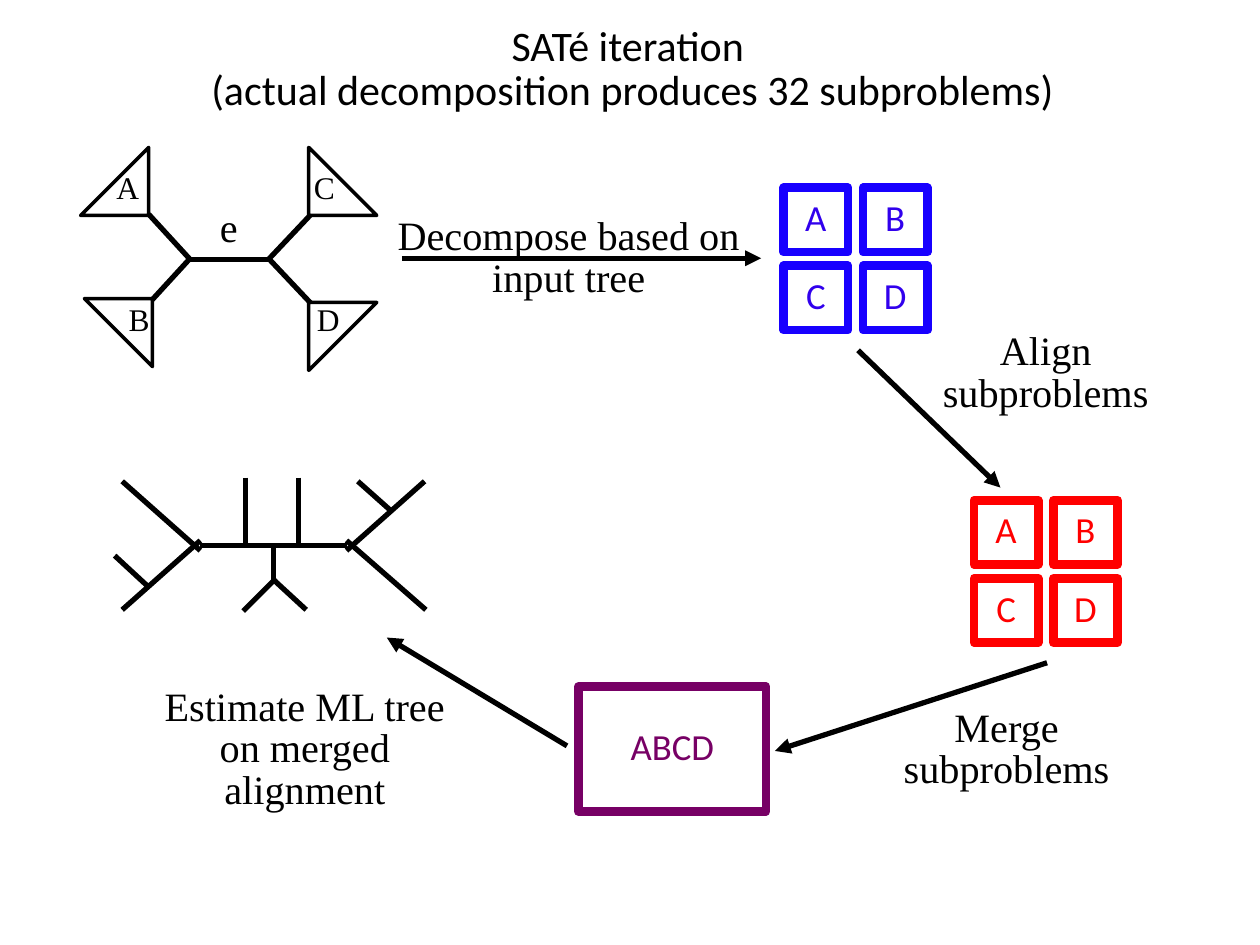
from lxml import etree
from pptx import Presentation
from pptx.dml.color import RGBColor
from pptx.enum.shapes import MSO_CONNECTOR, MSO_SHAPE
from pptx.enum.text import MSO_ANCHOR, PP_ALIGN
from pptx.oxml.ns import qn
from pptx.util import Inches, Pt

RECTANGLE, TRIANGLE = MSO_SHAPE.RECTANGLE, MSO_SHAPE.RIGHT_TRIANGLE
STRAIGHT = MSO_CONNECTOR.STRAIGHT
MIDDLE, CENTER = MSO_ANCHOR.MIDDLE, PP_ALIGN.CENTER
SERIF, SANS = "Times New Roman", "Calibri"
COLORS = {
    "black": "000000",
    "white": "FFFFFF",
    "blue": "1800FF",
    "blue text": "3100ED",
    "red": "FF0000",
    "purple": "770065",
}

deck = Presentation()
deck.slide_width, deck.slide_height = Inches(10), Inches(7.5)
page = deck.slides.add_slide(deck.slide_layouts[6])


def write(text, *, at, shape=None, font=SERIF, size=23, color="black", spacing=0.86):
    """Centre text in the given shape, or in a new text box at the given place."""
    box = shape or page.shapes.add_textbox(*map(Inches, at))
    frame = box.text_frame
    frame.word_wrap = True
    frame.vertical_anchor = MIDDLE
    frame.margin_left = frame.margin_right = frame.margin_top = frame.margin_bottom = 0
    para = frame.paragraphs[0]
    para.alignment, para.line_spacing = CENTER, spacing
    for number, line in enumerate(text.splitlines()):
        if number:
            para.add_line_break()
        span = para.add_run()
        span.text = line
        span.font.name, span.font.size = font, Pt(size)
        span.font.color.rgb = RGBColor.from_string(COLORS[color])


def outline(kind, at, color, width, filled=True):
    """Add an outlined shape, white inside unless filled is False."""
    shape = page.shapes.add_shape(kind, *map(Inches, at))
    shape.shadow.inherit = False
    if filled:
        shape.fill.solid()
        shape.fill.fore_color.rgb = RGBColor.from_string(COLORS["white"])
    else:
        shape.fill.background()
    shape.line.color.rgb = RGBColor.from_string(COLORS[color])
    shape.line.width = Pt(width)
    return shape


# Lines: start x, start y, end x, end y
input_tree = [
    (1.18, 1.7, 1.51, 2.06),
    (1.18, 2.41, 1.51, 2.05),
    (2.47, 1.7, 2.13, 2.06),
    (2.47, 2.41, 2.13, 2.05),
    (1.51, 2.06, 2.13, 2.06),
]
output_tree = [
    (0.97, 3.82, 1.59, 4.37),
    (0.97, 4.84, 1.59, 4.29),
    (3.37, 3.82, 2.75, 4.37),
    (3.38, 4.84, 2.75, 4.29),
    (1.59, 4.33, 2.75, 4.33),
    (1.95, 3.79, 1.95, 4.35),
    (2.37, 3.79, 2.37, 4.35),
    (2.84, 3.82, 3.11, 4.06),
    (0.91, 4.41, 1.17, 4.65),
    (2.17, 4.32, 2.17, 4.61),
    (2.17, 4.6, 2.43, 4.84),
    (2.19, 4.59, 1.93, 4.85),
]
step_arrows = [
    (3.19, 2.05, 6.04, 2.05),
    (6.81, 2.78, 7.94, 3.87),
    (8.31, 5.26, 6.15, 5.96),
    (4.5, 5.92, 3.07, 5.06),
]
for ends in input_tree + output_tree + step_arrows:
    line = page.shapes.add_connector(STRAIGHT, *map(Inches, ends))
    line.line.color.rgb = RGBColor.from_string(COLORS["black"])
    line.line.width = Pt(3)
    if ends in step_arrows:
        etree.SubElement(line.line._get_or_add_ln(), qn("a:tailEnd"), type="triangle")
    etree.SubElement(line._element.spPr, qn("a:effectLst"))

# Subtrees of the input tree: triangle corner, rotation, label corner
subtrees = {
    "A": (0.64, 1.17, 270, 0.81, 1.31),
    "B": (0.67, 2.37, 180, 0.9, 2.35),
    "C": (2.45, 1.17, 0, 2.37, 1.31),
    "D": (2.45, 2.4, 90, 2.4, 2.35),
}
for name, (left, top, rotation, label_left, label_top) in subtrees.items():
    triangle = outline(TRIANGLE, (left, top, 0.54, 0.54), "black", 2)
    triangle.rotation = rotation
    write(name, at=(label_left, label_top, 0.41, 0.4), size=18)
write("e", at=(1.59, 1.57, 0.45, 0.51))

# Subproblems before and after alignment, each a two by two grid
for left, top, border, ink in [
    (6.22, 1.49, "blue", "blue text"),
    (7.73, 3.97, "red", "red"),
]:
    for index, name in enumerate("ABCD"):
        row, column = divmod(index, 2)
        at = (left + column * 0.63, top + row * 0.62, 0.51, 0.51)
        square = outline(RECTANGLE, at, border, 5)
        write(name, at=at, shape=square, font=SANS, size=21, color=ink, spacing=0.87)

merged_at = (4.59, 5.45, 1.49, 0.99)
merged = outline(RECTANGLE, merged_at, "purple", 5, filled=False)
write("ABCD", at=merged_at, shape=merged, font=SANS, size=21, color="purple", spacing=0.87)

for caption, at in [
    ("Decompose based on input tree", (3.13, 1.61, 2.77, 0.89)),
    ("Align subproblems", (7.31, 2.52, 1.98, 0.9)),
    ("Merge subproblems", (6.89, 5.51, 2.2, 0.89)),
    ("Estimate ML tree on merged alignment", (1.18, 5.3, 2.48, 1.31)),
]:
    write(caption, at=at)

write(
    "SATé iteration \n(actual decomposition produces 32 subproblems)",
    at=(0.52, 0.11, 9, 0.89), font=SANS, size=24, spacing=0.87,
)

deck.save("out.pptx")
